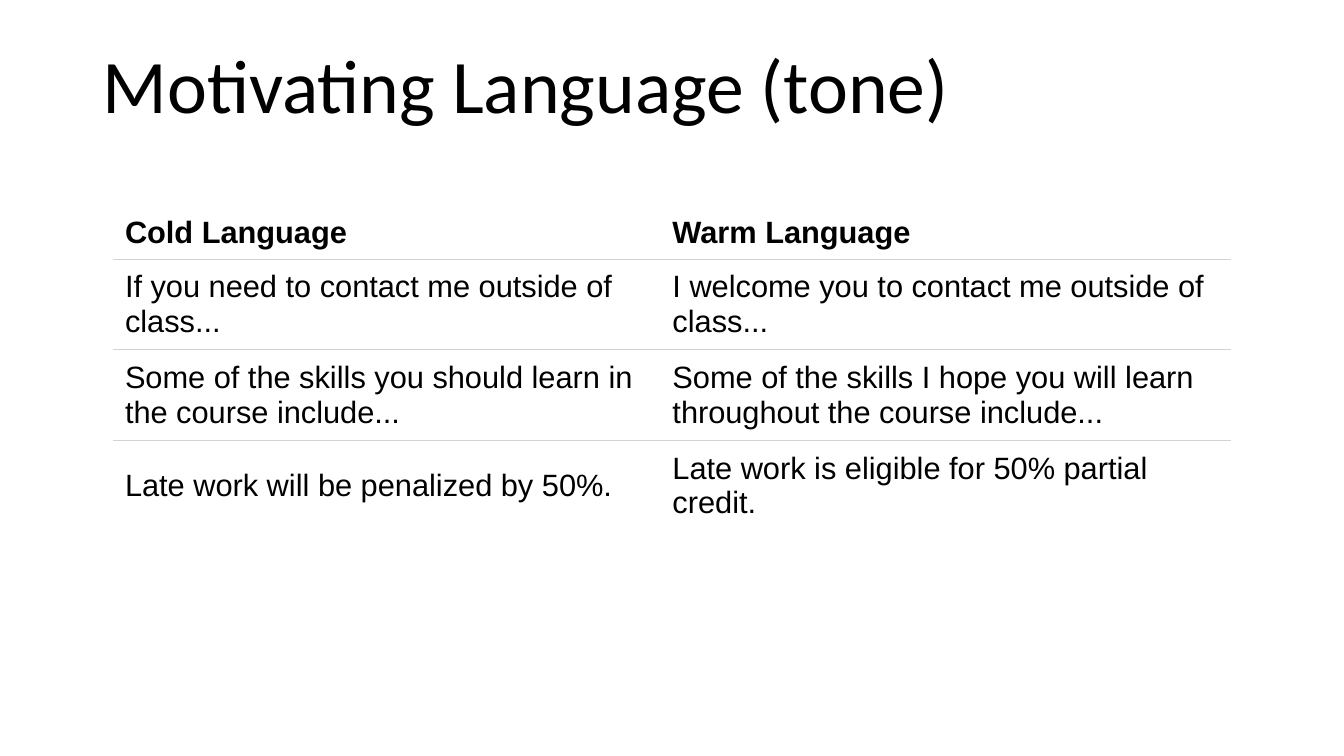
from dataclasses import dataclass
from typing import NamedTuple

from lxml import etree
from pptx import Presentation
from pptx.dml.color import RGBColor
from pptx.enum.text import MSO_ANCHOR
from pptx.oxml.ns import qn
from pptx.util import Inches, Pt

BOTTOM, MIDDLE = MSO_ANCHOR.BOTTOM, MSO_ANCHOR.MIDDLE


@dataclass(frozen=True)
class Theme:
    text: RGBColor = RGBColor(0, 0, 0)
    rule: str = "D2D3D4"
    rule_width: int = Pt(0.75)
    title_font: str = "Calibri"
    title_size: int = Pt(54)
    table_font: str = "Arial"
    table_size: int = Pt(22)


class ToneRow(NamedTuple):
    cold: str
    warm: str
    height: float = 0.9


THEME = Theme()
TITLE = "Motivating Language (tone)"
COLUMN_WIDTHS = (5.43, 5.66)
TONE_ROWS = (
    ToneRow("Cold Language", "Warm Language", 0.53),
    ToneRow("If you need to contact me outside of class...",
            "I welcome you to contact me outside of class..."),
    ToneRow("Some of the skills you should learn in the course include...",
            "Some of the skills I hope you will learn throughout the course include..."),
    ToneRow("Late work will be penalized by 50%.",
            "Late work is eligible for 50% partial credit.\u00a0"),
)
CELL_FORMAT = {
    "margin_left": Inches(0.12),
    "margin_right": Inches(0.12),
    "margin_top": Inches(0.06),
    "margin_bottom": Inches(0.06),
    "vertical_anchor": MIDDLE,
}
TABLE_FORMAT = {"first_row": True, "horz_banding": False}


def apply_format(target, values: dict) -> None:
    for name, value in values.items():
        setattr(target, name, value)


def write_text(tf, text: str, font: str, size: int, bold: bool = False) -> None:
    p = tf.paragraphs[0]
    r = p.add_run()
    r.text = text
    apply_format(r.font, {"name": font, "size": size, "bold": bold})
    r.font.color.rgb = THEME.text


def set_borders(cell, ruled_sides: str) -> None:
    tc_pr = cell._tc.get_or_add_tcPr()
    for side in "LRTB":
        ln = etree.SubElement(tc_pr, qn(f"a:ln{side}"))
        if side in ruled_sides:
            ln.set("w", str(THEME.rule_width))
            fill = etree.SubElement(ln, qn("a:solidFill"))
            etree.SubElement(fill, qn("a:srgbClr"), val=THEME.rule)
        else:
            etree.SubElement(ln, qn("a:noFill"))


def add_title(s) -> None:
    sp = s.shapes.add_textbox(Inches(0.92), Inches(0.32), Inches(11.5), Inches(1.02))
    tf = sp.text_frame
    apply_format(tf, {"word_wrap": True, "vertical_anchor": BOTTOM})
    write_text(tf, TITLE, THEME.title_font, THEME.title_size)
    tf.paragraphs[0].line_spacing = 0.9


def add_tone_table(s) -> None:
    height = sum(row.height for row in TONE_ROWS)
    table = s.shapes.add_table(
        len(TONE_ROWS), len(COLUMN_WIDTHS), Inches(1.12), Inches(2.04),
        Inches(sum(COLUMN_WIDTHS)), Inches(height)).table
    apply_format(table, TABLE_FORMAT)
    for column, width in zip(table.columns, COLUMN_WIDTHS):
        column.width = Inches(width)
    last = len(TONE_ROWS) - 1
    for i, row in enumerate(TONE_ROWS):
        table.rows[i].height = Inches(row.height)
        ruled_sides = ("T" if i > 0 else "") + ("B" if i < last else "")
        for j, text in enumerate((row.cold, row.warm)):
            cell = table.cell(i, j)
            apply_format(cell, CELL_FORMAT)
            set_borders(cell, ruled_sides)
            cell.fill.background()
            write_text(cell.text_frame, text, THEME.table_font, THEME.table_size, i == 0)


def main() -> None:
    prs = Presentation()
    prs.slide_width, prs.slide_height = Inches(13.33), Inches(7.5)
    s = prs.slides.add_slide(prs.slide_layouts[6])
    add_title(s)
    add_tone_table(s)
    prs.save("out.pptx")


if __name__ == "__main__":
    main()
